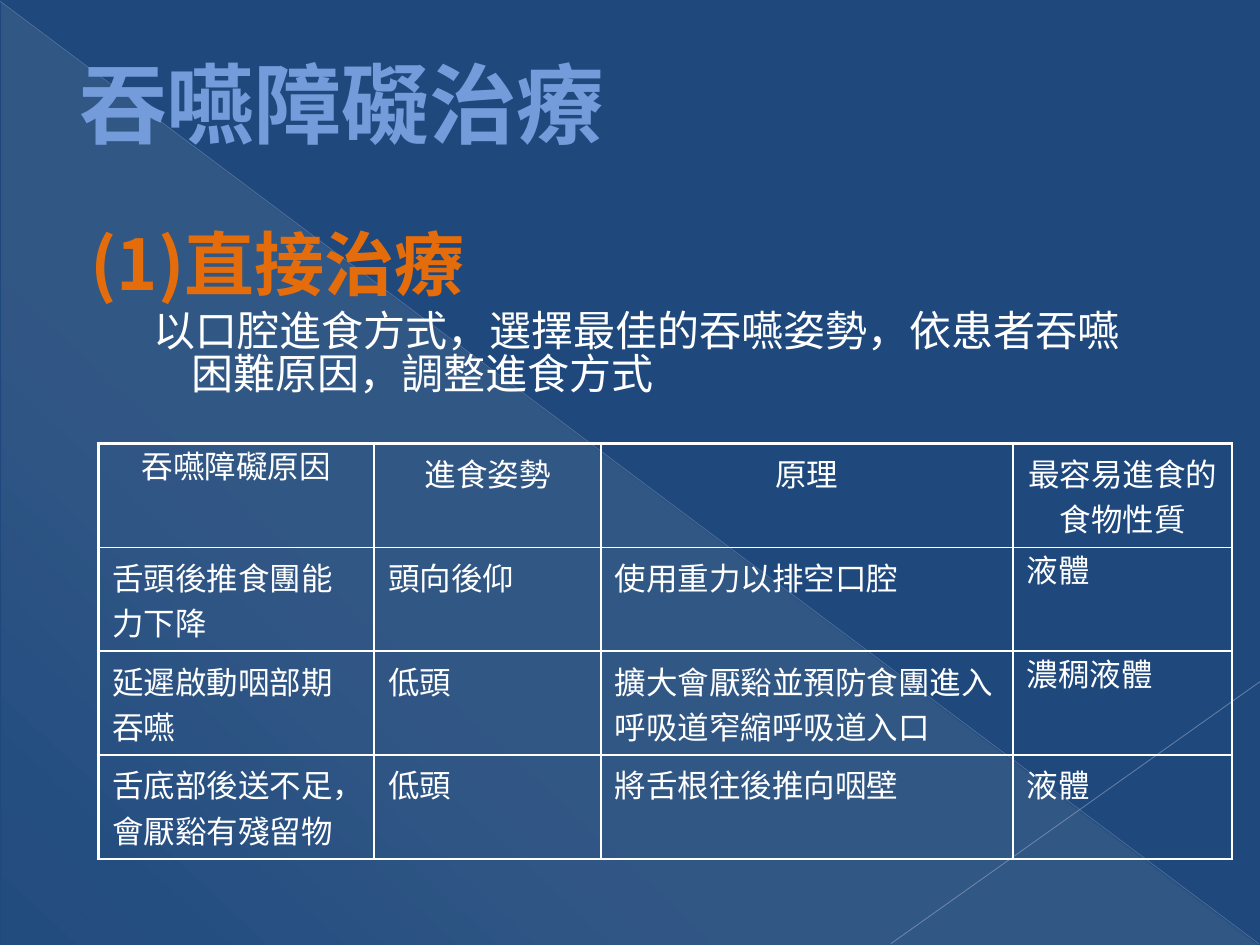
"""Build the swallowing disorder treatment slide with its posture table."""
import pptx
import pptx.util
import pptx.dml.color
import pptx.enum.shapes
import pptx.enum.text
import pptx.oxml
import pptx.oxml.ns
from lxml import etree

Inches, Pt = pptx.util.Inches, pptx.util.Pt
RGB = pptx.dml.color.RGBColor.from_string
ALIGN = pptx.enum.text.PP_ALIGN
ANCHOR = pptx.enum.text.MSO_ANCHOR
NS = 'xmlns:a="http://schemas.openxmlformats.org/drawingml/2006/main"'

TITLE = "吞嚥障礙治療"
HEADING = "(1)直接治療"
BODY = "以口腔進食方式，選擇最佳的吞嚥姿勢，依患者吞嚥困難原因，調整進食方式"
TABLE = [
    ["吞嚥障礙原因", "進食姿勢", "原理", "最容易進食的食物性質"],
    ["舌頭後推食團能力下降", "頭向後仰", "使用重力以排空口腔", "液體"],
    ["延遲啟動咽部期吞嚥", "低頭", "擴大會厭谿並預防食團進入呼吸道窄縮呼吸道入口", "濃稠液體"],
    ["舌底部後送不足，會厭谿有殘留物", "低頭", "將舌根往後推向咽壁", "液體"],
]
TIGHT_CELLS = {(0, 0), (1, 3), (2, 3)}
COL_WIDTHS = [2.19, 1.8, 3.27, 1.74]
ROW_HEIGHT = 0.82
GRADIENT = [(0, 10), (70, 8), (100, 1)]
RAYS = [
    ((0, 0.01), (9.99, 7.49), "ADB6CE", 0.39, 35),
    ((10, 5.41), (7.07, 7.49), "B6BED3", 0.47, 45),
]
THEME = {
    "font": "Noto Sans CJK SC", "bg": "1F497D", "glow": "EEECE1",
    "title": "749CDB", "outline": "375983", "heading": "E46C0A", "text": "FFFFFF",
    "title_size": 50, "heading_size": 40, "body_size": 24, "cell_size": 18,
    "thick": 2.25, "thin": 1,
}


def solid(color, alpha=100):
    return (f'<a:solidFill {NS}><a:srgbClr val="{color}">'
            f'<a:alpha val="{alpha * 1000}"/></a:srgbClr></a:solidFill>')


def add_run(p, text, size, color, bold=False):
    r = p.add_run()
    r.text = text
    r.font.size, r.font.bold, r.font.name = Pt(size), bold, THEME["font"]
    r.font.color.rgb = RGB(color)
    ea = etree.SubElement(r.font._element, pptx.oxml.ns.qn("a:ea"))
    ea.set("typeface", THEME["font"])
    return r


def set_indent(p, left, first):
    pPr = p._p.get_or_add_pPr()
    pPr.set("marL", str(Inches(left)))
    pPr.set("indent", str(Inches(first)))


def add_backdrop(s):
    fill = s.background.fill
    fill.solid()
    fill.fore_color.rgb = RGB(THEME["bg"])
    sp = s.shapes.add_shape(pptx.enum.shapes.MSO_SHAPE.RIGHT_TRIANGLE,
                            Inches(0.01), Inches(0.02), Inches(9.98), Inches(7.48))
    sp.shadow.inherit = False
    sp.line.fill.background()
    stops = "".join(
        f'<a:gs pos="{pos * 1000}"><a:srgbClr val="{THEME["glow"]}">'
        f'<a:alpha val="{alpha * 1000}"/></a:srgbClr></a:gs>' for pos, alpha in GRADIENT)
    geometry = sp._element.spPr.find(pptx.oxml.ns.qn("a:prstGeom"))
    geometry.addnext(pptx.oxml.parse_xml(
        f'<a:gradFill {NS} rotWithShape="1"><a:gsLst>{stops}</a:gsLst>'
        f'<a:lin ang="{133 * 60000}" scaled="0"/></a:gradFill>'))
    for start, end, color, width, alpha in RAYS:
        ray = s.shapes.add_connector(pptx.enum.shapes.MSO_CONNECTOR.STRAIGHT,
                                     *map(Inches, start + end))
        ray.line.width = Pt(width)
        ray.line._get_or_add_ln().append(pptx.oxml.parse_xml(solid(color, alpha)))
        etree.SubElement(ray._element.spPr, pptx.oxml.ns.qn("a:effectLst"))


def format_title(s):
    sp = s.shapes.title
    sp.left, sp.top, sp.width, sp.height = map(Inches, (0, 0.31, 9, 1))
    tf = sp.text_frame
    tf.word_wrap, tf.vertical_anchor = True, ANCHOR.MIDDLE
    tf.auto_size = pptx.enum.text.MSO_AUTO_SIZE.NONE
    p = tf.paragraphs[0]
    p.alignment = ALIGN.LEFT
    set_indent(p, 0.53, 0)
    r = add_run(p, TITLE, THEME["title_size"], THEME["title"], True)
    r.font._element.insert(0, pptx.oxml.parse_xml(
        f'<a:ln {NS} w="{Pt(0.5)}">{solid(THEME["outline"])}</a:ln>'))
    s.shapes._spTree.append(sp._element)


def format_cell(cell, text, row, col):
    cell.margin_left = cell.margin_right = Inches(0.11)
    cell.margin_top = cell.margin_bottom = Inches(0.05)
    cell.vertical_anchor = ANCHOR.TOP
    cell.fill.background()
    p = cell.text_frame.paragraphs[0]
    p.alignment = ALIGN.LEFT if row else ALIGN.CENTER
    p.space_before = Pt(THEME["cell_size"] * 0.2)
    if (row, col) in TIGHT_CELLS:
        p.line_spacing = 0.8
    add_run(p, text, THEME["cell_size"], THEME["text"])
    thick_sides = {"L": col == 0, "T": row == 0}
    for i, side in enumerate("LRTB"):
        width = THEME["thick" if thick_sides.get(side) else "thin"]
        cell._tc.get_or_add_tcPr().insert(i, pptx.oxml.parse_xml(
            f'<a:ln{side} {NS} w="{Pt(width)}">{solid(THEME["text"])}</a:ln{side}>'))


def add_posture_table(s):
    frame = s.shapes.add_table(len(TABLE), len(COL_WIDTHS), Inches(0.78), Inches(3.52),
                               Inches(sum(COL_WIDTHS)), Inches(ROW_HEIGHT * len(TABLE)))
    table = frame.table
    table.first_row = table.horz_banding = False
    for col, width in enumerate(COL_WIDTHS):
        table.columns[col].width = Inches(width)
    for row, texts in enumerate(TABLE):
        table.rows[row].height = Inches(ROW_HEIGHT)
        for col, text in enumerate(texts):
            format_cell(table.cell(row, col), text, row, col)


def add_body(s):
    box = s.shapes.add_textbox(*map(Inches, (0.62, 1.8, 8.44, 1.64)))
    tf = box.text_frame
    tf.word_wrap = True
    paragraphs = [(HEADING, "heading", 0.3, True), (BODY, "body", 0.8, False)]
    for level, (text, style, left, bold) in enumerate(paragraphs):
        p = tf.add_paragraph() if level else tf.paragraphs[0]
        p.level = level
        size = THEME[f"{style}_size"]
        p.space_before, p.line_spacing = Pt(size * 0.2), 0.85
        set_indent(p, left, -0.3)
        add_run(p, text, size, THEME.get(style, THEME["text"]), bold)


def main():
    prs = pptx.Presentation()
    prs.slide_width, prs.slide_height = Inches(10), Inches(7.5)
    s = prs.slides.add_slide(prs.slide_layouts[5])
    add_backdrop(s)
    format_title(s)
    add_posture_table(s)
    add_body(s)
    prs.save("out.pptx")


if __name__ == "__main__":
    main()
